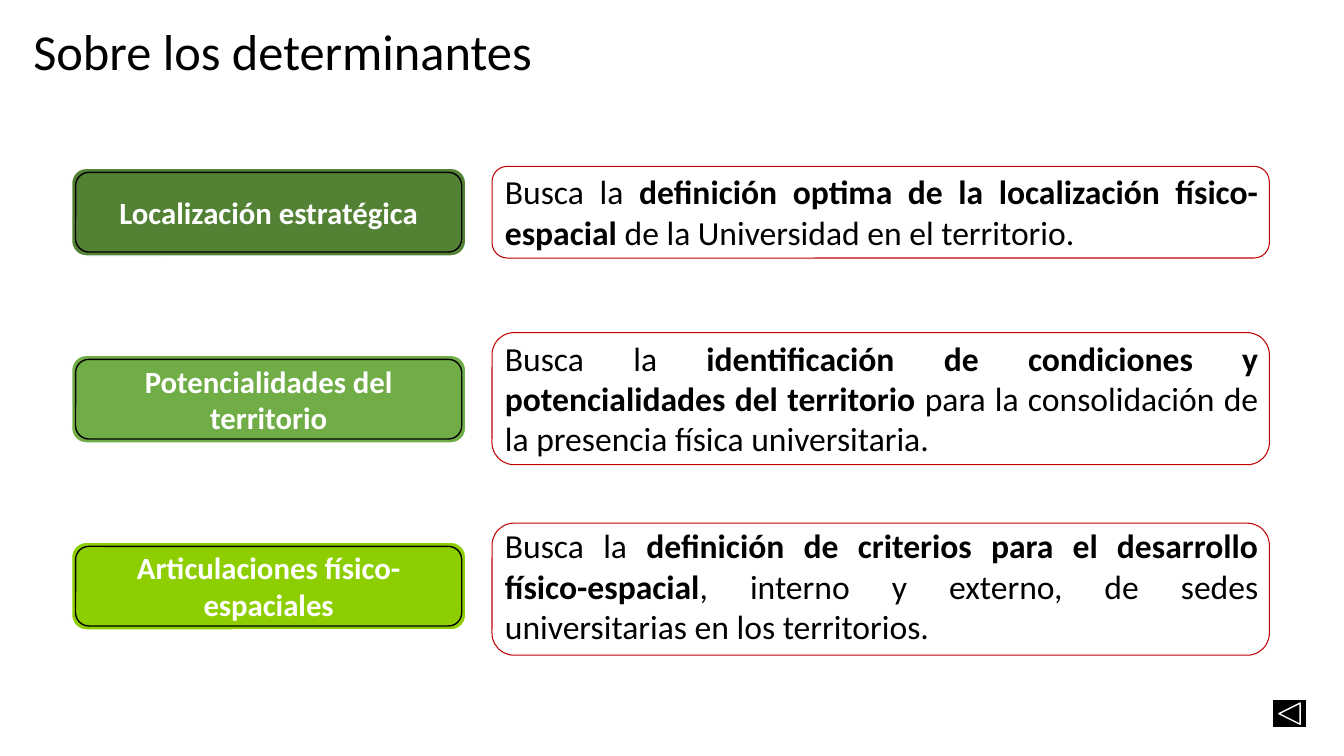
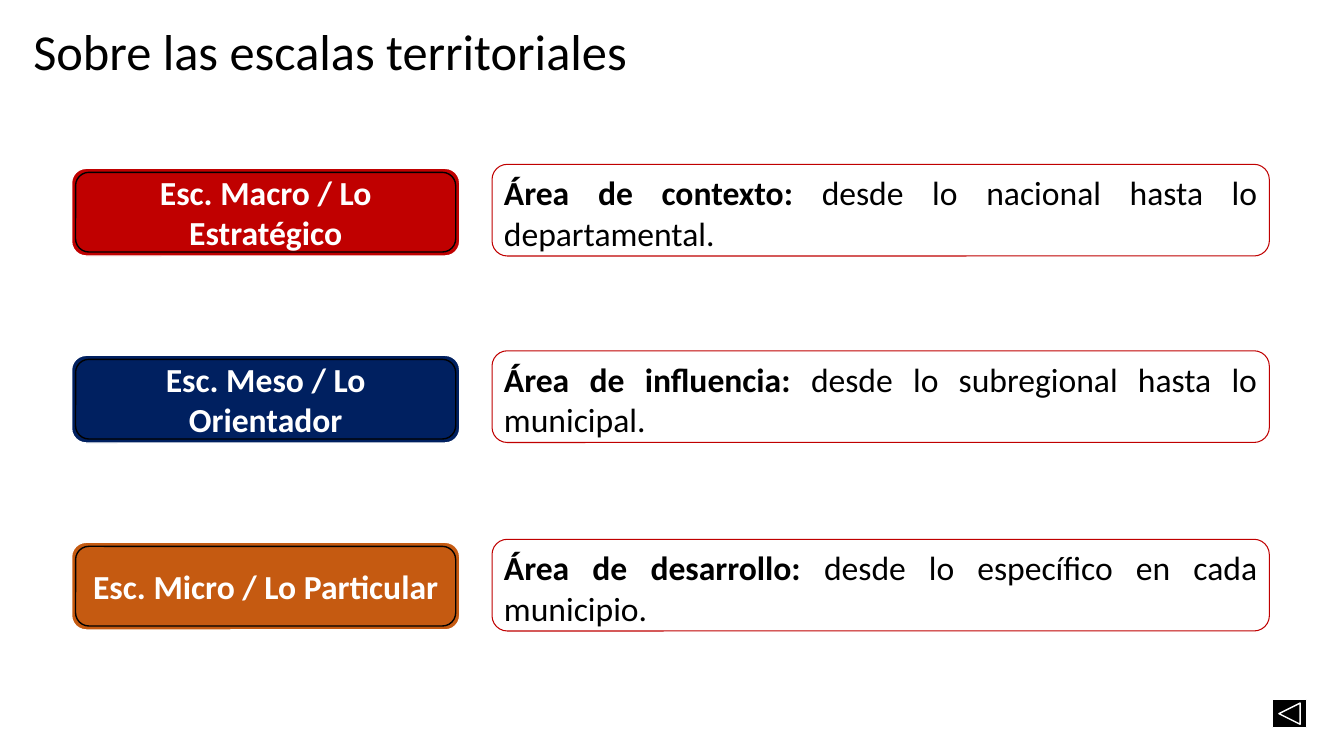
from pptx import Presentation
from pptx.dml.color import RGBColor
from pptx.enum.shapes import MSO_SHAPE
from pptx.enum.text import MSO_ANCHOR, MSO_AUTO_SIZE, PP_ALIGN
from pptx.util import Inches, Pt

FONT = "Calibri"
BLACK, WHITE, RED = "000000", "FFFFFF", "C00000"
LABEL_X, LABEL_Y, LABEL_H, LABEL_STEP = 0.71, 1.67, 0.87, 1.855
RING_GAP = 0.04
FRAME_X, FRAME_W = 4.88, 7.71
TEXT_W = 7.67

# Each row: label, colour, frame top, text top, height, space before,
# and the description as (text, bold) runs
SLIDES = [
    {
        "title": "Sobre los determinantes",
        "label_w": 3.91, "label_size": 22, "text_x": 4.91,
        "rows": [
            ("Localización estratégica", "548235", 1.65, 1.65, 0.91, 0,
             [("Busca la ", False),
              ("definición optima de la localización físico-espacial", True),
              (" de la Universidad en el territorio.", False)]),
            ("Potencialidades del territorio", "70AD47", 3.3, 3.3, 1.31, 0,
             [("Busca la ", False),
              ("identificación de condiciones y potencialidades del territorio", True),
              (" para la consolidación de la presencia física universitaria.", False)]),
            ("Articulaciones físico-espaciales", "8DCE00", 5.19, 5.16, 1.31, 6,
             [("Busca la ", False),
              ("definición de criterios para el desarrollo físico-espacial", True),
              (", interno y externo, de sedes universitarias en los territorios.", False)]),
        ],
    },
    {
        "title": "Sobre las escalas territoriales",
        "label_w": 3.85, "label_size": 24, "text_x": 4.9,
        "rows": [
            ("Esc. Macro / Lo Estratégico", RED, 1.63, 1.66, 0.91, 0,
             [("Área de contexto: ", True),
              ("desde lo nacional hasta lo departamental.", False)]),
            ("Esc. Meso / Lo Orientador", "002060", 3.48, 3.51, 0.91, 0,
             [("Área de influencia: ", True),
              ("desde lo subregional hasta lo municipal.", False)]),
            ("Esc. Micro / Lo Particular", "C55A11", 5.35, 5.38, 0.91, 0,
             [("Área de desarrollo: ", True),
              ("desde lo específico en cada municipio.", False)]),
        ],
    },
]


def rgb(value):
    return RGBColor.from_string(value)


def style_run(r, size, color=BLACK, bold=False):
    r.font.name = FONT
    r.font.size = Pt(size)
    r.font.bold = bold
    r.font.color.rgb = rgb(color)


def add_box(s, x, y, w, h, line, width=1, fill=None, kind=MSO_SHAPE.ROUNDED_RECTANGLE):
    sp = s.shapes.add_shape(kind, Inches(x), Inches(y), Inches(w), Inches(h))
    sp.shadow.inherit = False
    sp.line.color.rgb = rgb(line)
    sp.line.width = Pt(width)
    if fill:
        sp.fill.solid()
        sp.fill.fore_color.rgb = rgb(fill)
    else:
        sp.fill.background()
    return sp


def set_title(s, text):
    sp = s.shapes.title
    sp.left, sp.top, sp.width, sp.height = Inches(0), Inches(0.19), Inches(13.33), Inches(0.57)
    tf = sp.text_frame
    tf.text = text
    tf.auto_size = MSO_AUTO_SIZE.NONE
    tf.vertical_anchor = MSO_ANCHOR.MIDDLE
    tf.margin_left = Inches(0.33)
    p = tf.paragraphs[0]
    p.alignment = PP_ALIGN.JUSTIFY
    p.line_spacing = 1.07
    style_run(p.runs[0], 36)


def add_label(s, text, color, y, w, size):
    sp = add_box(s, LABEL_X, y, w, LABEL_H, WHITE, fill=color)
    tf = sp.text_frame
    tf.text = text
    tf.word_wrap = True
    tf.vertical_anchor = MSO_ANCHOR.MIDDLE
    p = tf.paragraphs[0]
    p.alignment = PP_ALIGN.CENTER
    style_run(p.runs[0], size, WHITE, True)
    # Thin black ring just inside the label
    add_box(s, LABEL_X + RING_GAP, y + RING_GAP,
            w - 2 * RING_GAP, LABEL_H - 2 * RING_GAP, BLACK)


def add_description(s, runs, x, y, h, before):
    sp = s.shapes.add_textbox(Inches(x), Inches(y), Inches(TEXT_W), Inches(h))
    tf = sp.text_frame
    tf.word_wrap = True
    tf.auto_size = MSO_AUTO_SIZE.SHAPE_TO_FIT_TEXT
    p = tf.paragraphs[0]
    p.alignment = PP_ALIGN.JUSTIFY
    p.space_before, p.space_after = Pt(before), Pt(1)
    for text, bold in runs:
        r = p.add_run()
        r.text = text
        style_run(r, 24, bold=bold)


def add_back_button(s):
    sp = add_box(s, 12.62, 6.94, 0.34, 0.28, WHITE, fill=BLACK,
                 kind=MSO_SHAPE.ACTION_BUTTON_FORWARD_OR_NEXT)
    sp.element.spPr.xfrm.set("flipH", "1")


def main():
    prs = Presentation()
    prs.slide_width, prs.slide_height = Inches(13.33), Inches(7.5)
    for data in SLIDES:
        s = prs.slides.add_slide(prs.slide_layouts[5])
        set_title(s, data["title"])
        add_back_button(s)
        for i, (label, color, frame_y, text_y, h, before, runs) in enumerate(data["rows"]):
            add_label(s, label, color, LABEL_Y + i * LABEL_STEP,
                      data["label_w"], data["label_size"])
            add_description(s, runs, data["text_x"], text_y, h, before)
            add_box(s, FRAME_X, frame_y, FRAME_W, h, RED, 0.75)
    prs.save("out.pptx")


if __name__ == "__main__":
    main()
